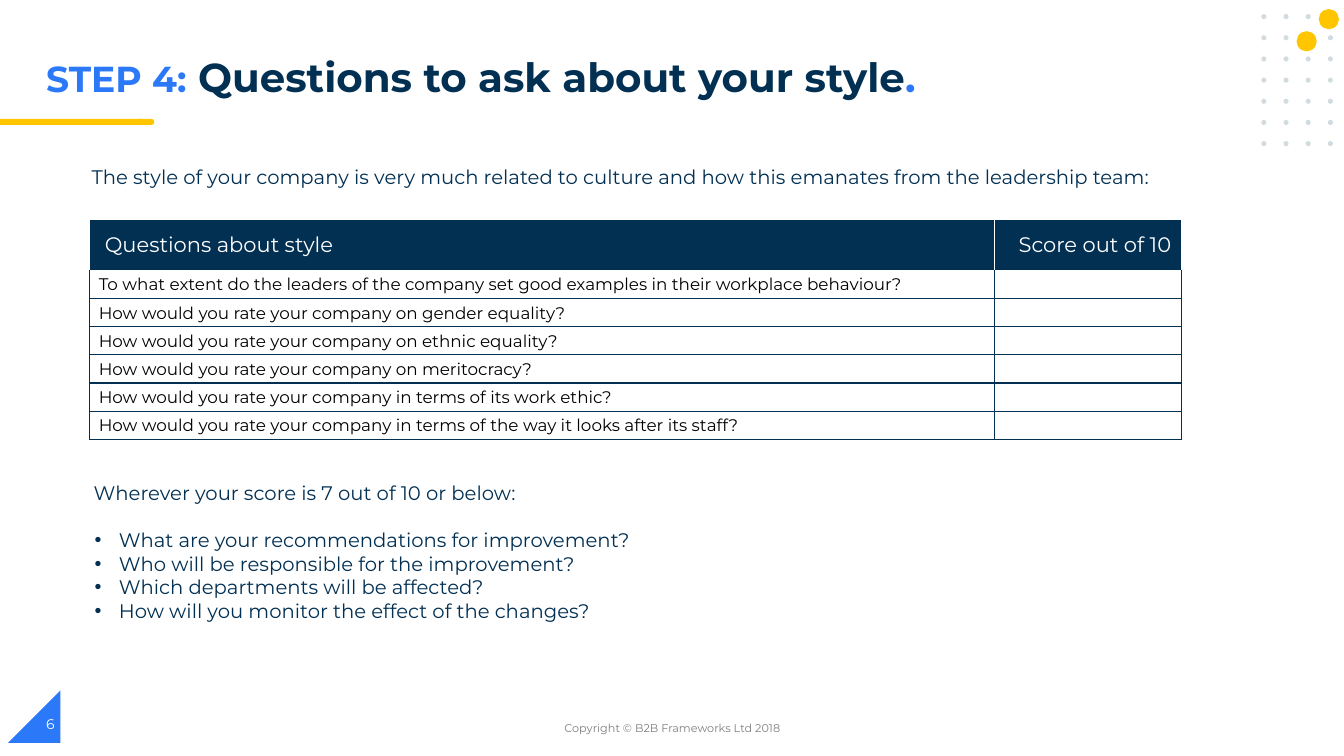
from lxml import etree
from pptx import Presentation
from pptx.dml.color import RGBColor
from pptx.enum import shapes, text
from pptx.oxml import ns
from pptx.util import Inches, Pt

BLUE = RGBColor(0x2B, 0x79, 0xF8)
NAVY = RGBColor(0x02, 0x30, 0x53)
YELLOW = RGBColor(0xFF, 0xC6, 0x00)
PALE = RGBColor(0xD1, 0xDB, 0xE0)
GREY = RGBColor(0x7F, 0x7F, 0x7F)
WHITE = RGBColor(0xFF, 0xFF, 0xFF)
BLACK = RGBColor(0x00, 0x00, 0x00)
FONT = "Montserrat"

TITLE = [
    ("STEP 4:", 25.8, BLUE),
    (" Questions to ask about your style", 28.8, NAVY),
    (".", 28.8, BLUE),
]
INTRO = "The style of your company is very much related to culture and how this emanates from the leadership team:"
HEADINGS = ("Questions about style", "Score out of 10")
QUESTIONS = [
    "To what extent do the leaders of the company set good examples in their workplace behaviour?",
    "How would you rate your company on gender equality?",
    "How would you rate your company on ethnic equality?",
    "How would you rate your company on meritocracy?",
    "How would you rate your company in terms of its work ethic?",
    "How would you rate your company in terms of the way it looks after its staff?",
]
FOLLOW_UP = "Wherever your score is 7 out of 10 or below:"
ACTIONS = [
    "What are your recommendations for improvement?",
    "Who will be responsible for the improvement?",
    "Which departments will be affected?",
    "How will you monitor the effect of the changes?",
]
COPYRIGHT = "Copyright © B2B Frameworks Ltd 2018"
PAGE_NUMBER = "6"

COLUMN_WIDTHS = (8.97, 1.86)
HEADER_HEIGHT, ROW_HEIGHT = 0.5, 0.28
DOT_COLUMNS, DOT_ROWS = 4, 7
DOT_LEFT, DOT_TOP, DOT_SIZE = 12.51, 0.14, 0.05
DOT_STEP_X, DOT_STEP_Y = 0.22, 0.21
BIG_DOT_SIZE = 0.2
BIG_DOTS = [(13.08, 0.09), (12.86, 0.31)]


def add_block(slide, kind, box, color):
    shape = slide.shapes.add_shape(kind, *map(Inches, box))
    shape.shadow.inherit = False
    shape.fill.solid()
    shape.fill.fore_color.rgb = color
    shape.line.fill.background()
    return shape


def style(paragraph, size, color):
    font = paragraph.font
    font.name, font.size, font.color.rgb = FONT, Pt(size), color


def add_text(slide, box, lines, size, color, anchor=text.MSO_ANCHOR.TOP):
    frame = slide.shapes.add_textbox(*map(Inches, box)).text_frame
    frame.word_wrap = True
    frame.vertical_anchor = anchor
    frame.text = "\n".join(lines)
    for paragraph in frame.paragraphs:
        style(paragraph, size, color)
    return frame


def add_bullet(paragraph):
    properties = paragraph._p.get_or_add_pPr()
    properties.set("marL", str(Inches(0.25)))
    properties.set("indent", str(-Inches(0.24)))
    etree.SubElement(properties, ns.qn("a:buFont")).set("typeface", "Arial")
    etree.SubElement(properties, ns.qn("a:buChar")).set("char", "•")


def add_borders(cell, colors):
    properties = cell._tc.get_or_add_tcPr()
    for side, color in zip("LRTB", colors):
        line = etree.SubElement(properties, ns.qn(f"a:ln{side}"), w=str(Pt(1)))
        fill = etree.SubElement(line, ns.qn("a:solidFill"))
        etree.SubElement(fill, ns.qn("a:srgbClr")).set("val", str(color))


def fill_cell(cell, words, size, color, borders, indent):
    cell.margin_left = cell.margin_right = cell.margin_top = Inches(0.01)
    cell.margin_bottom = 0
    cell.vertical_anchor = text.MSO_ANCHOR.MIDDLE
    add_borders(cell, borders)
    cell.text = words
    paragraph = cell.text_frame.paragraphs[0]
    paragraph._p.get_or_add_pPr().set("marL", str(Inches(indent)))
    style(paragraph, size, color)
    return paragraph


def add_score_table(slide):
    row_count = len(QUESTIONS) + 1
    height = HEADER_HEIGHT + ROW_HEIGHT * len(QUESTIONS)
    box = (0.89, 2.18, sum(COLUMN_WIDTHS), height)
    table = slide.shapes.add_table(row_count, len(COLUMN_WIDTHS), *map(Inches, box)).table
    table.first_row = table.horz_banding = False
    for column, width in zip(table.columns, COLUMN_WIDTHS):
        column.width = Inches(width)
    for index, row in enumerate(table.rows):
        row.height = Inches(ROW_HEIGHT if index else HEADER_HEIGHT)
    for index, heading in enumerate(HEADINGS):
        cell = table.cell(0, index)
        paragraph = fill_cell(cell, heading, 15, WHITE, [WHITE] * 4, 0.14)
        if index:
            paragraph.alignment = text.PP_ALIGN.CENTER
        cell.fill.solid()
        cell.fill.fore_color.rgb = NAVY
    for index, question in enumerate(QUESTIONS, 1):
        top = WHITE if index == 1 else NAVY
        for column, words in enumerate((question, "")):
            cell = table.cell(index, column)
            fill_cell(cell, words, 12, BLACK, (NAVY, NAVY, top, NAVY), 0.08)
            cell.fill.background()


def add_decoration(slide):
    kinds = shapes.MSO_SHAPE
    corner = add_block(slide, kinds.RIGHT_TRIANGLE, (0.08, 6.85, 0.52, 0.52), BLUE)
    corner._element.spPr.find(ns.qn("a:xfrm")).set("flipH", "1")
    add_block(slide, kinds.FLOWCHART_TERMINATOR, (1.34, 1.18, 0.19, 0.06), YELLOW)
    add_block(slide, kinds.RECTANGLE, (0, 1.18, 1.41, 0.06), YELLOW)
    for row in range(DOT_ROWS):
        for column in range(DOT_COLUMNS):
            left = DOT_LEFT + column * DOT_STEP_X
            top = DOT_TOP + row * DOT_STEP_Y
            add_block(slide, kinds.OVAL, (left, top, DOT_SIZE, DOT_SIZE), PALE)
    for left, top in BIG_DOTS:
        add_block(slide, kinds.OVAL, (left, top, BIG_DOT_SIZE, BIG_DOT_SIZE), YELLOW)


def add_title(slide):
    frame = add_text(slide, (0.36, 0.52, 9.35, 0.6), [""], 28.8, NAVY)
    paragraph = frame.paragraphs[0]
    paragraph.line_spacing = 0.9
    paragraph.font.bold = True
    for words, size, color in TITLE:
        run = paragraph.add_run()
        run.text = words
        run.font.name, run.font.size, run.font.bold = FONT, Pt(size), True
        run.font.color.rgb = color


def main():
    presentation = Presentation()
    presentation.slide_width, presentation.slide_height = Inches(13.33), Inches(7.5)
    slide = presentation.slides.add_slide(presentation.slide_layouts[6])
    add_decoration(slide)
    add_title(slide)
    add_text(slide, (0.81, 1.59, 11.85, 0.34), [INTRO], 14, NAVY)
    add_score_table(slide)
    follow_up = add_text(slide, (0.83, 4.72, 9.55, 1.52), [FOLLOW_UP, *ACTIONS], 14, NAVY)
    bullets = follow_up.paragraphs[1:]
    for paragraph in bullets:
        add_bullet(paragraph)
    bullets[0].space_before = Pt(17)
    middle = text.MSO_ANCHOR.MIDDLE
    footer = add_text(slide, (4.42, 7.02, 4.5, 0.4), [COPYRIGHT], 8, GREY, middle)
    footer.paragraphs[0].alignment = text.PP_ALIGN.CENTER
    add_text(slide, (0.36, 6.98, 3, 0.4), [PAGE_NUMBER], 10, WHITE, middle)
    presentation.save("out.pptx")


if __name__ == "__main__":
    main()
